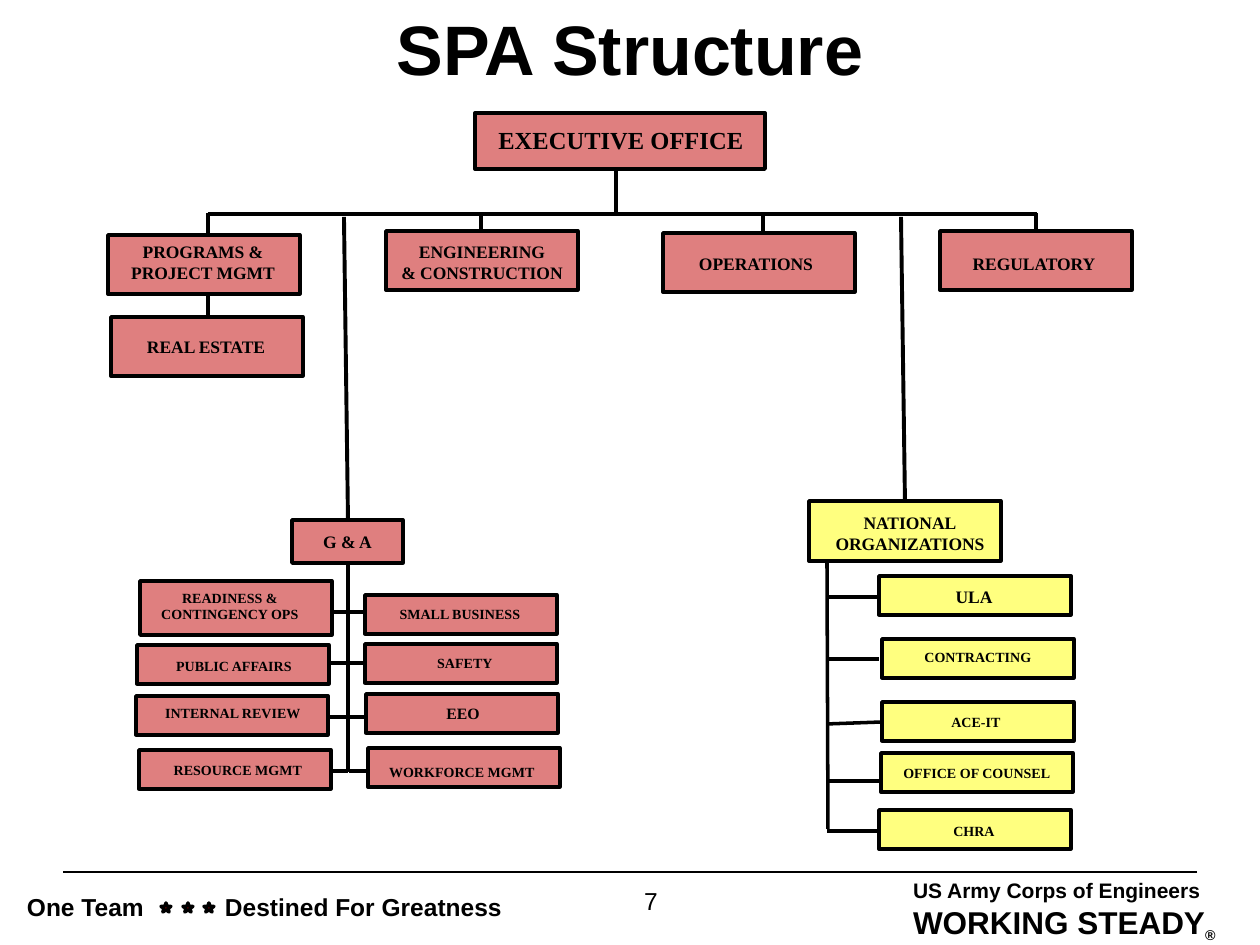
from lxml.etree import SubElement
from pptx import Presentation
from pptx.dml.color import RGBColor
from pptx.enum.shapes import MSO_CONNECTOR as CONN, MSO_SHAPE as SHAPE
from pptx.enum.text import MSO_ANCHOR as ANCHOR, PP_ALIGN as ALIGN
from pptx.oxml.ns import qn
from pptx.util import Inches, Pt

PX = Inches(1) / 126
RED, YELLOW, BLACK = "C00000", "FFFF00", "000000"
SERIF, SANS = "Times New Roman", "Arial"
W, H, LOW = 192, 59, 39

RED_BOXES = [
    (["EXECUTIVE OFFICE"], 14, (475, 113, 290, 56), (1, -1)),
    (["PROGRAMS & PROJECT MGMT"], 10, (108, 235, W, H), (-1, -2)),
    (["ENGINEERING", "& CONSTRUCTION"], 10, (386, 231, W, H), (0, 1)),
    (["OPERATIONS"], 10, (663, 233, W, H), (-3, 1)),
    (["REGULATORY"], 10, (940, 231, W, H), (-2, 3)),
    (["REAL ESTATE"], 10, (111, 317, W, H), (-1, 0)),
    (["G & A"], 10, (292, 520, 111, 43), (0, 0)),
    (["READINESS & CONTINGENCY OPS"], 8, (140, 581, W, 54), (-6, -2)),
    (["PUBLIC AFFAIRS"], 8, (137, 645, W, LOW), (1, 1)),
    (["INTERNAL REVIEW"], 8, (136, 696, W, LOW), (1, -3)),
    (["RESOURCE MGMT"], 8, (139, 750, W, LOW), (3, 0)),
    (["SMALL BUSINESS"], 8, (365, 595, W, LOW), (-1, -1)),
    (["SAFETY"], 8, (365, 644, W, LOW), (4, -1)),
    (["EEO"], 9, (366, 694, W, LOW), (1, 0)),
    (["WORKFORCE MGMT"], 8, (368, 748, W, LOW), (-2, 4)),
]
YELLOW_BOXES = [
    (["NATIONAL", "ORGANIZATIONS"], 10, (809, 501, W, 60), (5, 2)),
    (["ULA"], 10, (879, 576, W, LOW), (-1, 1)),
    (["CONTRACTING"], 8, (882, 639, W, LOW), (0, -2)),
    (["ACE-IT"], 8, (882, 702, W, LOW), (-2, 0)),
    (["OFFICE OF COUNSEL"], 8, (881, 753, W, LOW), (0, 0)),
    (["CHRA"], 8, (879, 810, W, LOW), (-1, 1)),
]
LINES = [
    (1197, 872, 63, 872, 0.75),
    (616, 170, 616, 213, 2),
    (208, 236, 208, 213, 2),
    (481, 232, 481, 213, 2),
    (763, 232, 763, 213, 2),
    (1036, 231, 1036, 213, 2),
    (208, 315, 208, 296, 2),
    (208, 214, 1037, 214, 2.25),
    (905, 501, 901, 217, 2.25),
    (348, 520, 344, 217, 2.25),
    (348, 772, 348, 563, 2),
    (333, 612, 364, 612, 2),
    (331, 663, 363, 663, 2),
    (330, 717, 364, 717, 2),
    (329, 771, 348, 771, 2),
    (349, 771, 368, 771, 2),
    (828, 829, 827, 562, 2),
    (828, 597, 881, 597, 2),
    (828, 659, 879, 659, 2),
    (827, 724, 882, 722, 2),
    (827, 781, 881, 781, 2),
    (827, 831, 879, 831, 2),
]
STARS = [161, 183, 204]


def px(*values):
    return [round(v * PX) for v in values]


def rgb(color):
    return RGBColor.from_string(color)


def put(obj, **values):
    for name, value in values.items():
        setattr(obj, name, value)


def frame(tf, margins=(0, 0, 0, 0), anchor=ANCHOR.TOP):
    left, top, right, bottom = px(*margins)
    put(tf, word_wrap=True, vertical_anchor=anchor, margin_left=left,
        margin_top=top, margin_right=right, margin_bottom=bottom)


def write(p, text, size, name=SANS, bold=True):
    r = p.add_run()
    r.text = text
    put(r.font, size=Pt(size), name=name, bold=bold)
    r.font.color.rgb = rgb(BLACK)
    return r


def shape(kind, box, color, width):
    sp = s.shapes.add_shape(kind, *px(*box))
    sp.shadow.inherit = False
    sp.fill.solid()
    sp.fill.fore_color.rgb = rgb(color)
    sp.line.color.rgb = rgb(BLACK)
    sp.line.width = Pt(width)
    return sp


def org_box(lines, size, box, shift, color):
    sp = shape(SHAPE.RECTANGLE, box, color, 2.25 if size == 14 else 2)
    fill = sp.fill.fore_color._xFill.find(qn("a:srgbClr"))
    SubElement(fill, qn("a:alpha"), val="50000")
    dx, dy = shift
    tf = sp.text_frame
    frame(tf, [max(0, 2 * d) for d in (dx, dy, -dx, -dy)], ANCHOR.MIDDLE)
    for i, text in enumerate(lines):
        p = tf.add_paragraph() if i else tf.paragraphs[0]
        p.alignment = ALIGN.CENTER
        write(p, text, size, SERIF)


def line(x1, y1, x2, y2, width):
    c = s.shapes.add_connector(CONN.STRAIGHT, *px(x1, y1, x2, y2))
    c.line.color.rgb = rgb(BLACK)
    c.line.width = Pt(width)
    SubElement(c._element.spPr, qn("a:effectLst"))


def text_box(box, margins=(13, 6, 13, 6)):
    tf = s.shapes.add_textbox(*px(*box)).text_frame
    frame(tf, margins)
    return tf


prs = Presentation()
prs.slide_width, prs.slide_height = px(1260, 945)
s = prs.slides.add_slide(prs.slide_layouts[5])

title = s.shapes.title
put(title, **dict(zip(("left", "top", "width", "height"), px(0, 0, 1260, 100))))
frame(title.text_frame, (13, 6, 13, 10), ANCHOR.MIDDLE)
p = title.text_frame.paragraphs[0]
p.alignment = ALIGN.CENTER
write(p, "SPA Structure", 40)

for item in LINES:
    line(*item)
for color, boxes in ((RED, RED_BOXES), (YELLOW, YELLOW_BOXES)):
    for item in boxes:
        org_box(*item, color)

p = text_box((27, 892, 480, 31), (0, 0, 0, 0)).paragraphs[0]
tabs = SubElement(p._p.get_or_add_pPr(), qn("a:tabLst"))
SubElement(tabs, qn("a:tab"), pos=str(px(198)[0]), algn="l")
write(p, "One Team\tDestined For Greatness", 14)
for x in STARS:
    shape(SHAPE.STAR_5_POINT, (x, 903, 10, 9), "FF0000", 2)

p = text_box((504, 880, 294, 65)).paragraphs[0]
p.alignment = ALIGN.CENTER
write(p, "7", 14, bold=False)

tf = text_box((900, 872, 360, 73))
write(tf.paragraphs[0], "US Army Corps of Engineers", 12)
p = tf.add_paragraph()
write(p, "WORKING STEADY", 18)
mark = write(p, "®", 14)
mark._r.get_or_add_rPr().set("baseline", "-25000")

prs.save("out.pptx")
